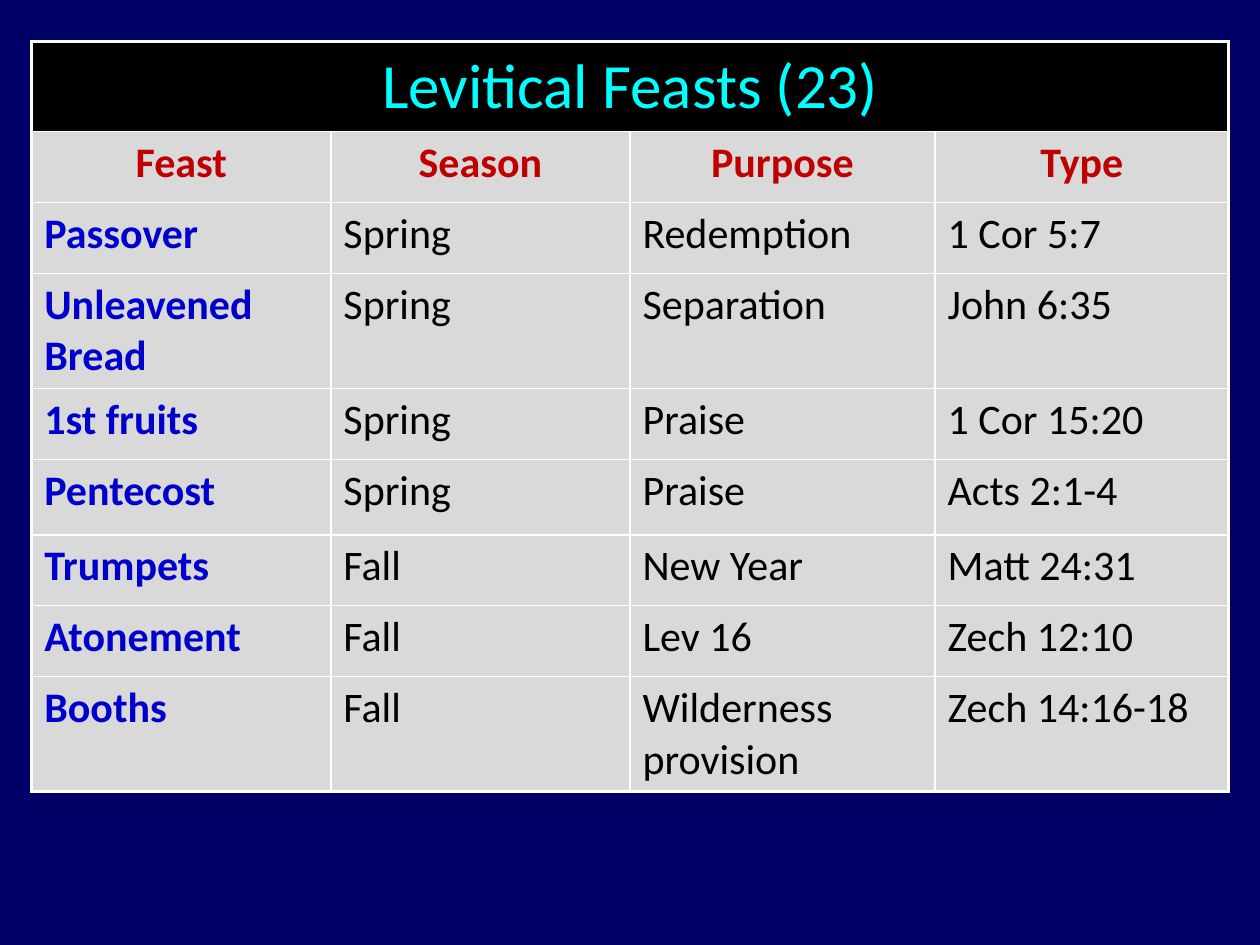
import pptx
import pptx.dml.color
import pptx.enum.text
import pptx.oxml
import pptx.oxml.ns
import pptx.util
from pptx.util import Cm

WHITE, BLACK, GREY = "FFFFFF", "000000", "D9D9D9"
THIN, THICK = 1, 2.25


def color(hex_value):
    return pptx.dml.color.RGBColor.from_string(hex_value)


def add_border(cell, side, points):
    """Add one white line; call in the order L, R, T, B and before the fill."""
    width = int(pptx.util.Pt(points))
    cell._tc.get_or_add_tcPr().append(pptx.oxml.parse_xml(
        f'<a:ln{side} {pptx.oxml.ns.nsdecls("a")} w="{width}"><a:solidFill>'
        f'<a:srgbClr val="{WHITE}"/></a:solidFill></a:ln{side}>'))


presentation = pptx.Presentation()
presentation.slide_width = Cm(25.4)
presentation.slide_height = Cm(19.05)
slide = presentation.slides.add_slide(presentation.slide_layouts[6])
slide.background.fill.solid()
slide.background.fill.fore_color.rgb = color("000066")

# Table contents
rows = [
    ["Levitical Feasts (23)", "", "", ""],
    ["Feast", "Season", "Purpose", "Type"],
    ["Passover", "Spring", "Redemption", "1 Cor 5:7"],
    ["Unleavened Bread", "Spring", "Separation", "John 6:35"],
    ["1st fruits", "Spring", "Praise", "1 Cor 15:20"],
    ["Pentecost", "Spring", "Praise", "Acts 2:1-4"],
    ["Trumpets", "Fall", "New Year", "Matt 24:31"],
    ["Atonement", "Fall", "Lev 16", "Zech 12:10"],
    ["Booths", "Fall", "Wilderness provision", "Zech 14:16-18"],
]
column_widths = [6.03, 6.03, 6.15, 5.92]
row_heights = [1.43] * 5 + [1.52] + [1.43] * 3
last_row, last_column = len(rows) - 1, len(column_widths) - 1

# Text formats by role
title_font = {"size": pptx.util.Pt(36), "bold": False}
header_font = {"size": pptx.util.Pt(24), "bold": True}
body_font = {"size": pptx.util.Pt(24), "bold": False}

# Table grid
table = slide.shapes.add_table(
    len(rows), len(column_widths), Cm(0.64), Cm(0.84),
    Cm(sum(column_widths)), Cm(sum(row_heights))).table
for column, width in zip(table.columns, column_widths):
    column.width = Cm(width)
for row, height in zip(table.rows, row_heights):
    row.height = Cm(height)
table.cell(0, 0).merge(table.cell(0, last_column))

# Cells: borders, fill and text
for row_index, texts in enumerate(rows):
    for column_index, text in enumerate(texts):
        cell = table.cell(row_index, column_index)
        outer_sides = {"L": column_index == 0, "R": column_index == last_column,
                       "T": row_index == 0, "B": row_index == last_row}
        if row_index == 0 and column_index == 0:
            outer_sides["R"] = True
        for side, is_outer in outer_sides.items():
            add_border(cell, side, THICK if is_outer else THIN)
        cell.fill.solid()
        cell.fill.fore_color.rgb = color(BLACK if row_index == 0 else GREY)
        if not text:
            continue

        if row_index == 0:
            font_format, text_color = title_font, "00FFFF"
        elif row_index == 1:
            font_format, text_color = header_font, "C00000"
        elif column_index == 0:
            font_format, text_color = header_font, "0000CC"
        else:
            font_format, text_color = body_font, BLACK

        paragraph = cell.text_frame.paragraphs[0]
        paragraph.alignment = (pptx.enum.text.PP_ALIGN.CENTER if row_index < 2
                               else pptx.enum.text.PP_ALIGN.LEFT)
        paragraph._p.get_or_add_pPr().append(pptx.oxml.parse_xml(
            f'<a:spcBef {pptx.oxml.ns.nsdecls("a")}>'
            '<a:spcPct val="20000"/></a:spcBef>'))
        run = paragraph.add_run()
        run.text = text
        for name, value in font_format.items():
            setattr(run.font, name, value)
        run.font.name = "Calibri"
        run.font.color.rgb = color(text_color)

presentation.save("out.pptx")
